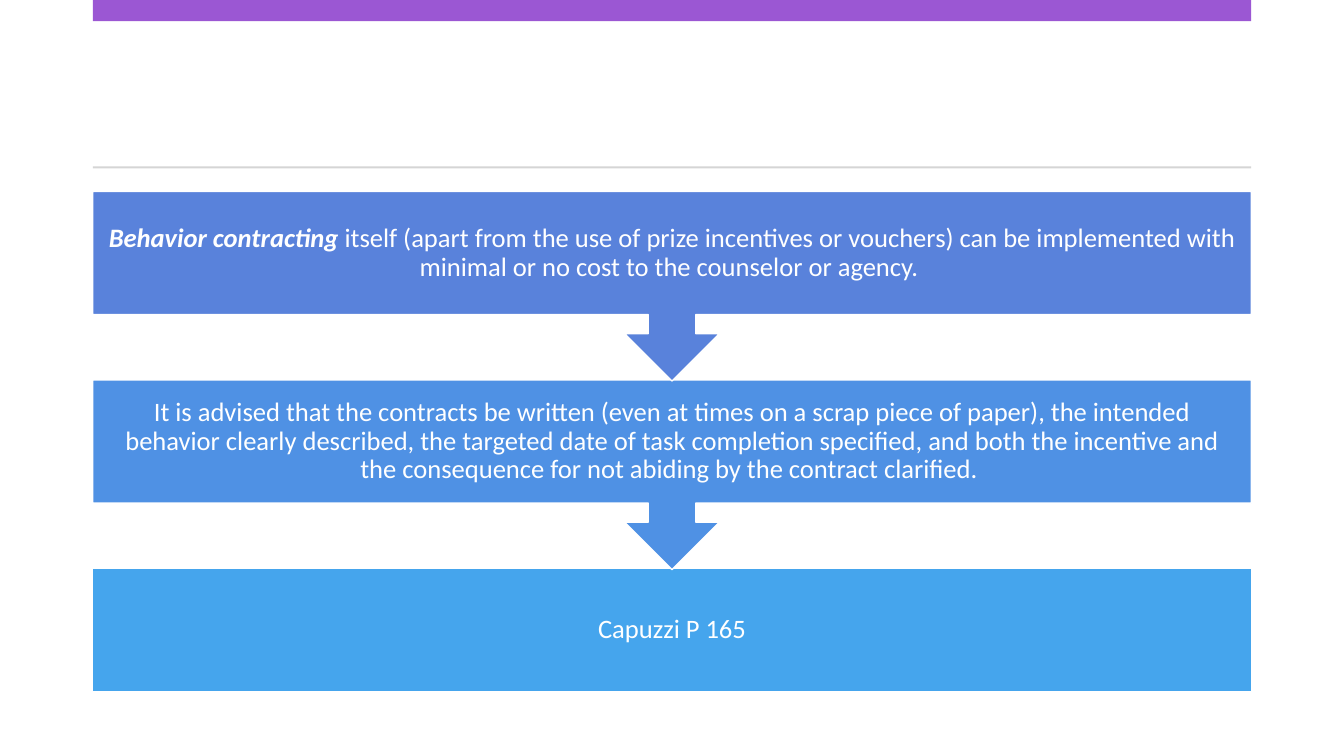
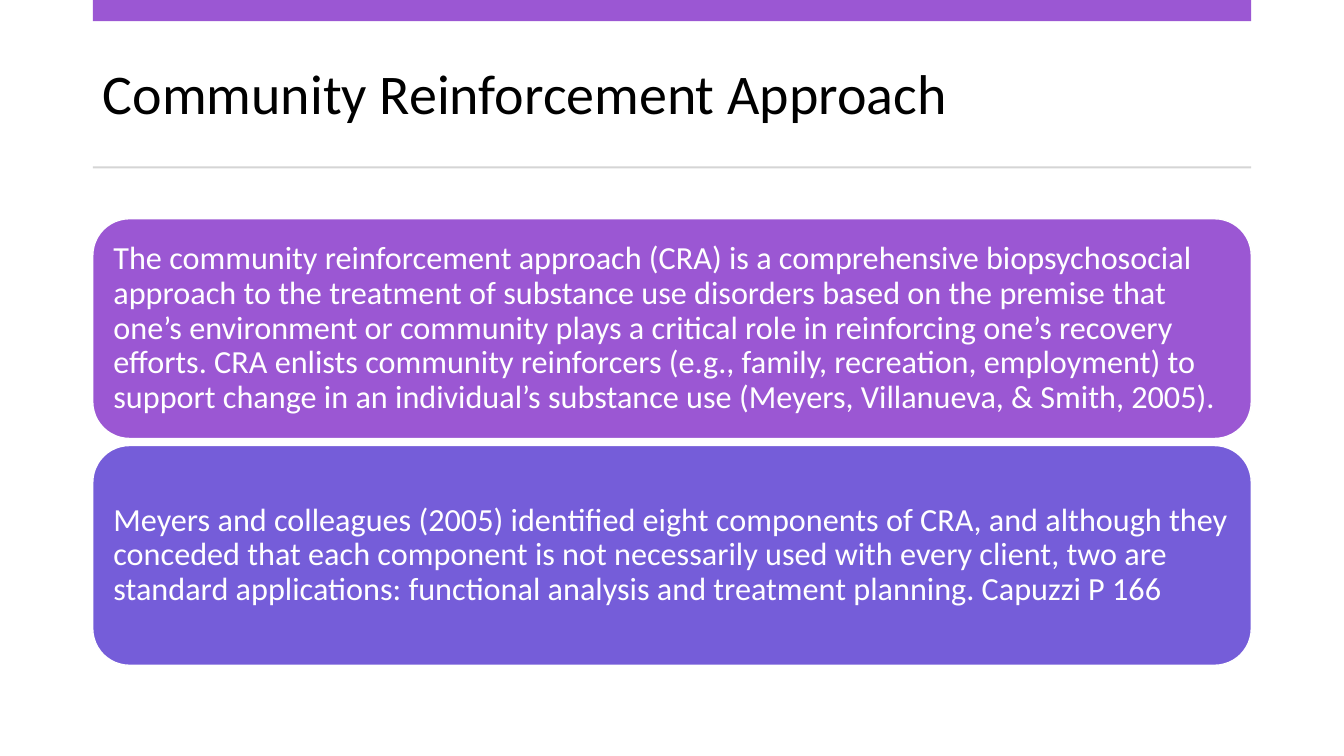
from dataclasses import dataclass
from typing import Any, NamedTuple

from pptx import Presentation
from pptx.dml.color import RGBColor
from pptx.enum.shapes import MSO_SHAPE
from pptx.enum.text import MSO_ANCHOR, MSO_AUTO_SIZE, PP_ALIGN
from pptx.util import Emu, Pt

SCALE = 9144  # EMU per px, 100 px to the inch


@dataclass(frozen=True)
class Theme:
    font: str = "Calibri"
    ink: str = "000000"
    paper: str = "FFFFFF"
    band: str = "9B57D3"
    rule: str = "D5D5D5"
    steps: tuple[str, ...] = ("5982DB", "4F91E4", "45A5ED")
    cards: tuple[str, ...] = ("9B57D3", "755DD9")
    title: int = 40
    step: int = 19
    card: int = 23
    edge: int = 1
    spacing: float = 0.9


THEME = Theme()


class Box(NamedTuple):
    left: int
    top: int
    width: int
    height: int


class Run(NamedTuple):
    text: str
    strong: bool = False


class Panel(NamedTuple):
    kind: MSO_SHAPE
    box: Box
    fill: str
    runs: tuple[Run, ...]
    size: int
    align: PP_ALIGN
    inset: int


LEFT, WIDTH = 92, 1149
BAND = Box(LEFT, 0, WIDTH, 21)
RULE = Box(LEFT, 165, WIDTH, 2)
TITLE = Box(LEFT, 37, WIDTH, 118)
STEP_TOP, STEP_PITCH, ARROW_TALL, LAST_TALL = 190, 187, 188, 122
CARD_TOP, CARD_PITCH, CARD_TALL = 217, 225, 218

STEPS = (
    (Run("Behavior contracting ", True),
     Run("itself (apart from the use of prize incentives or vouchers) can be "
         "implemented with minimal or no cost to the counselor or agency. ")),
    (Run("It is advised that the contracts be written (even at times on a scrap "
         "piece of paper), the intended behavior clearly described, the targeted "
         "date of task completion specified, and both the incentive and the "
         "consequence for not abiding by the contract clarified. "),),
    (Run("Capuzzi P 165"),),
)
CARDS = (
    (Run("The community reinforcement approach (CRA) is a comprehensive "
         "biopsychosocial approach to the treatment of substance use disorders "
         "based on the premise that one’s environment or community plays a "
         "critical role in reinforcing one’s recovery efforts. CRA enlists "
         "community reinforcers (e.g., family, recreation, employment) to support "
         "change in an individual’s substance use (Meyers, Villanueva, & Smith, "
         "2005)."),),
    (Run("Meyers and colleagues (2005) identified eight components of CRA, and "
         "although they conceded that each component is not necessarily used with "
         "every client, two are standard applications: functional analysis and "
         "treatment planning. Capuzzi P 166"),),
)


def px(count: int) -> Emu:
    return Emu(count * SCALE)


def apply(target: Any, form: dict[str, Any]) -> None:
    for name, value in form.items():
        setattr(target, name, value)


def write(shape: Any, runs: tuple[Run, ...], size: int, color: str,
          align: PP_ALIGN, sides: int, ends: int) -> None:
    """Fill a shape with one paragraph; sides and ends are its insets."""
    frame = shape.text_frame
    apply(frame, {
        "word_wrap": True, "auto_size": MSO_AUTO_SIZE.NONE,
        "vertical_anchor": MSO_ANCHOR.MIDDLE,
        "margin_left": px(sides), "margin_right": px(sides),
        "margin_top": px(ends), "margin_bottom": px(ends),
    })
    para = frame.paragraphs[0]
    apply(para, {"alignment": align, "line_spacing": THEME.spacing})
    for part in runs:
        run = para.add_run()
        run.text = part.text
        apply(run.font, {"name": THEME.font, "size": Pt(size),
                         "bold": part.strong, "italic": part.strong})
        run.font.color.rgb = RGBColor.from_string(color)


def block(slide: Any, kind: MSO_SHAPE, box: Box, fill: str) -> Any:
    """Add a flat shape with neither line nor shadow."""
    shape = slide.shapes.add_shape(kind, *map(px, box))
    shape.shadow.inherit = False
    shape.fill.solid()
    shape.fill.fore_color.rgb = RGBColor.from_string(fill)
    shape.line.fill.background()
    return shape


def draw(slide: Any, panel: Panel) -> None:
    shape = block(slide, panel.kind, panel.box, panel.fill)
    shape.line.color.rgb = RGBColor.from_string(THEME.paper)
    shape.line.width = Pt(THEME.edge)
    write(shape, panel.runs, panel.size, THEME.paper, panel.align,
          panel.inset, panel.inset)


def start(deck: Any, title: str = "") -> Any:
    """Add a slide with the shared band and rule, and a title if given."""
    name = "Title Only" if title else "Blank"
    slide = deck.slides.add_slide(deck.slide_layouts.get_by_name(name))
    if title:
        apply(slide.shapes.title, dict(zip(Box._fields, map(px, TITLE))))
        write(slide.shapes.title, (Run(title),), THEME.title, THEME.ink,
              PP_ALIGN.LEFT, 10, 5)
    for box, fill in ((BAND, THEME.band), (RULE, THEME.rule)):
        block(slide, MSO_SHAPE.RECTANGLE, box, fill)
    return slide


def flow(deck: Any) -> None:
    slide = start(deck)
    last = len(STEPS) - 1
    # Upper steps go in front, so that each arrow tip lies over the next box.
    for i in range(last, -1, -1):
        kind, tall = ((MSO_SHAPE.RECTANGLE, LAST_TALL) if i == last
                      else (MSO_SHAPE.DOWN_ARROW_CALLOUT, ARROW_TALL))
        box = Box(LEFT, STEP_TOP + i * STEP_PITCH, WIDTH, tall)
        draw(slide, Panel(kind, box, THEME.steps[i], STEPS[i], THEME.step,
                          PP_ALIGN.CENTER, 15))


def cards(deck: Any) -> None:
    slide = start(deck, "Community Reinforcement Approach")
    for i, (fill, runs) in enumerate(zip(THEME.cards, CARDS)):
        box = Box(LEFT, CARD_TOP + i * CARD_PITCH, WIDTH, CARD_TALL)
        draw(slide, Panel(MSO_SHAPE.ROUNDED_RECTANGLE, box, fill, runs,
                          THEME.card, PP_ALIGN.LEFT, 10))


def main() -> None:
    deck = Presentation()
    apply(deck, {"slide_width": px(1333), "slide_height": px(750)})
    flow(deck)
    cards(deck)
    deck.save("out.pptx")


if __name__ == "__main__":
    main()
